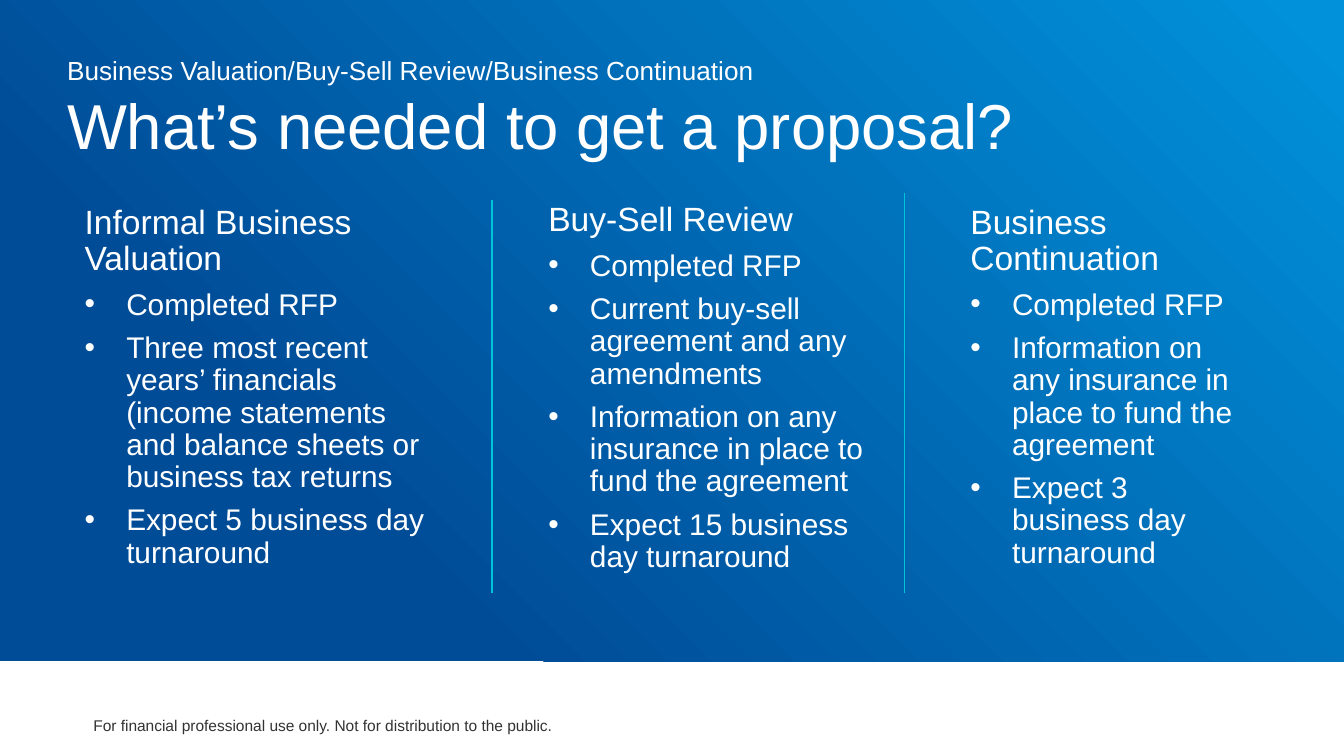
from lxml import etree
from pptx import Presentation
from pptx.dml.color import RGBColor
from pptx.enum.shapes import MSO_CONNECTOR, MSO_SHAPE
from pptx.enum.text import MSO_ANCHOR, PP_ALIGN
from pptx.oxml.ns import qn
from pptx.util import Inches, Pt

RECTANGLE = MSO_SHAPE.RECTANGLE
STRAIGHT = MSO_CONNECTOR.STRAIGHT
MIDDLE = MSO_ANCHOR.MIDDLE
CENTER = PP_ALIGN.CENTER

SLIDE_WIDTH = 10
SLIDE_HEIGHT = SLIDE_WIDTH * 9 / 16

FONT = "Arial"
COLORS = {
    "navy": "004C97",
    "sky": "0091DA",
    "divider": "00C4D9",
    "white": "FFFFFF",
    "footer": "333333",
}

TOPIC = "Business Valuation/Buy-Sell Review/Business Continuation"
TITLE = "What’s needed to get a proposal?"
FOOTER = "For financial professional use only. Not for distribution to the public."

# Left, top and width in inches, heading, requirements
COLUMNS = [
    (0.33, 1.08, 3.14, "Informal Business Valuation", [
        "Completed RFP",
        "Three most recent years’ financials (income statements and balance "
        "sheets or business tax returns",
        "Expect 5 business day turnaround",
    ]),
    (3.78, 1.06, 2.95, "Buy-Sell Review", [
        "Completed RFP",
        "Current buy-sell agreement and any amendments",
        "Information on any insurance in place to fund the agreement",
        "Expect 15 business day turnaround",
    ]),
    (6.92, 1.08, 2.68, "Business Continuation", [
        "Completed RFP",
        "Information on any insurance in place to fund the agreement",
        "Expect 3 business day turnaround",
    ]),
]
COLUMN_HEIGHT = 2.94
COLUMN_INSETS = (0.3, 0.45, 0.3, 0.3)
BULLET_INDENT = 0.31

DIVIDERS = [(3.66, 1.49), (6.73, 1.44)]  # x, top
DIVIDER_BOTTOM = 4.41


def color(name):
    return RGBColor.from_string(COLORS[name])


def add_text_frame(slide, left, top, width, height, insets=(0, 0, 0, 0)):
    box = slide.shapes.add_textbox(
        Inches(left), Inches(top), Inches(width), Inches(height))
    frame = box.text_frame
    frame.word_wrap = True
    (frame.margin_left, frame.margin_top,
     frame.margin_right, frame.margin_bottom) = map(Inches, insets)
    return frame


def add_paragraph(frame, text, size, color_name="white", bullet=False):
    """Fill the frame's empty first paragraph, or append a new one."""
    first = frame.paragraphs[0]
    paragraph = frame.add_paragraph() if first.runs else first
    paragraph.add_run().text = text
    if bullet:
        properties = paragraph._p.get_or_add_pPr()
        properties.set("marL", str(Inches(BULLET_INDENT)))
        properties.set("indent", str(-Inches(BULLET_INDENT)))
        etree.SubElement(properties, qn("a:buFont"), typeface=FONT)
        etree.SubElement(properties, qn("a:buChar"), char="•")
    paragraph.font.name = FONT
    paragraph.font.size = Pt(size)
    paragraph.font.color.rgb = color(color_name)
    return paragraph


def add_background(slide):
    panel = slide.shapes.add_shape(
        RECTANGLE, 0, 0, Inches(SLIDE_WIDTH), Inches(4.92))
    panel.shadow.inherit = False
    panel.line.fill.background()
    panel.fill.gradient()
    panel.fill.gradient_angle = 45
    stops = [(0.25, "navy"), (0.98, "sky")]
    for stop, (position, name) in zip(panel.fill.gradient_stops, stops):
        stop.position = position
        stop.color.rgb = color(name)


def add_divider(slide, x, top):
    line = slide.shapes.add_connector(
        STRAIGHT, Inches(x), Inches(top), Inches(x), Inches(DIVIDER_BOTTOM))
    line.line.color.rgb = color("divider")
    line.line.width = Pt(0.75)
    etree.SubElement(line._element.spPr, qn("a:effectLst"))


def add_column(slide, left, top, width, heading, requirements):
    frame = add_text_frame(
        slide, left, top, width, COLUMN_HEIGHT, COLUMN_INSETS)
    add_paragraph(frame, heading, 18)
    for requirement in requirements:
        add_paragraph(frame, requirement, 16, bullet=True)
    for paragraph in frame.paragraphs:
        paragraph.line_spacing = 0.9
        paragraph.space_after = Pt(6)


def add_title(slide):
    frame = add_text_frame(slide, 0.5, 0.45, 9, 0.85)
    add_paragraph(frame, TOPIC, 14).line_spacing = 0.8
    title = add_paragraph(frame, TITLE, 34)
    title.line_spacing = 0.8
    title.space_before = Pt(8)


def add_footer(slide):
    frame = add_text_frame(
        slide, -0.51, 5.25, 5.82, 0.3, (0.07, 0.04, 0.07, 0.04))
    frame.vertical_anchor = MIDDLE
    add_paragraph(frame, FOOTER, 8.3, "footer").alignment = CENTER


def main():
    presentation = Presentation()
    presentation.slide_width = Inches(SLIDE_WIDTH)
    presentation.slide_height = Inches(SLIDE_HEIGHT)
    slide = presentation.slides.add_slide(presentation.slide_layouts[6])
    add_background(slide)
    add_title(slide)
    for divider in DIVIDERS:
        add_divider(slide, *divider)
    for column in COLUMNS:
        add_column(slide, *column)
    add_footer(slide)
    presentation.save("out.pptx")


if __name__ == "__main__":
    main()
